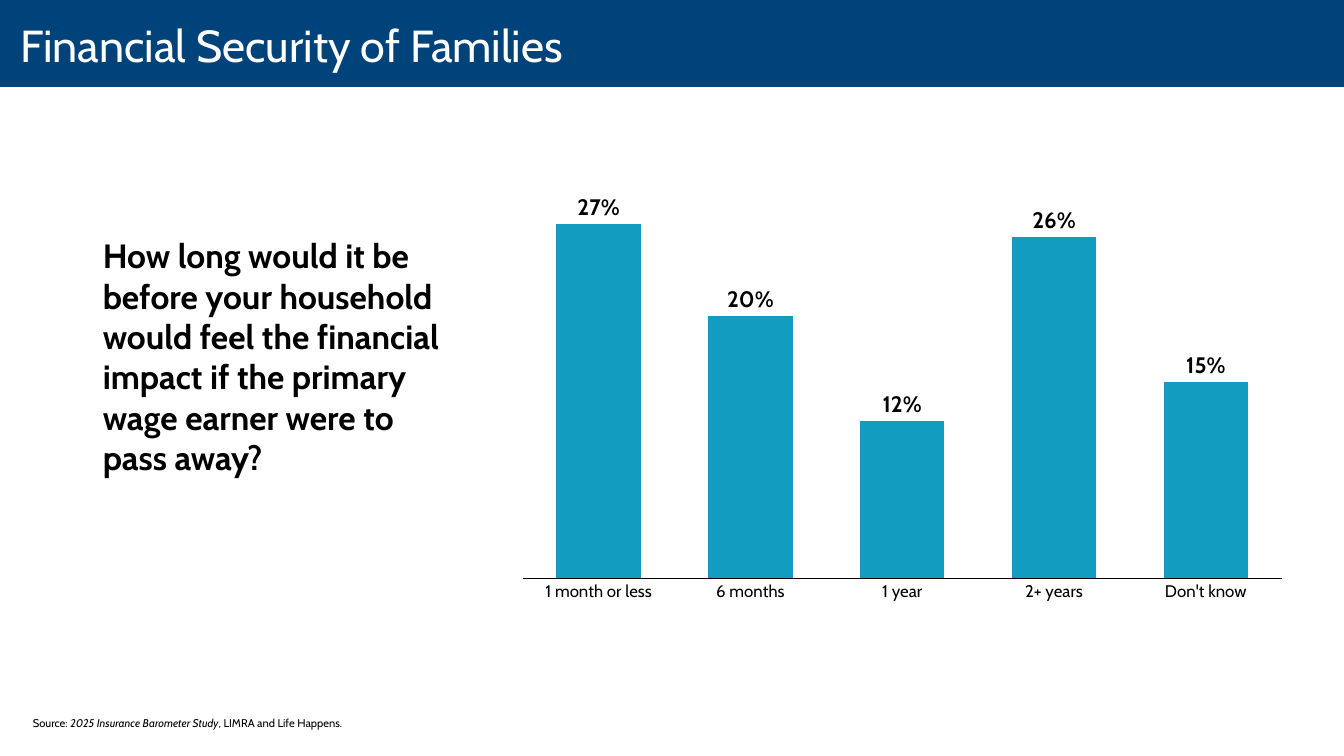
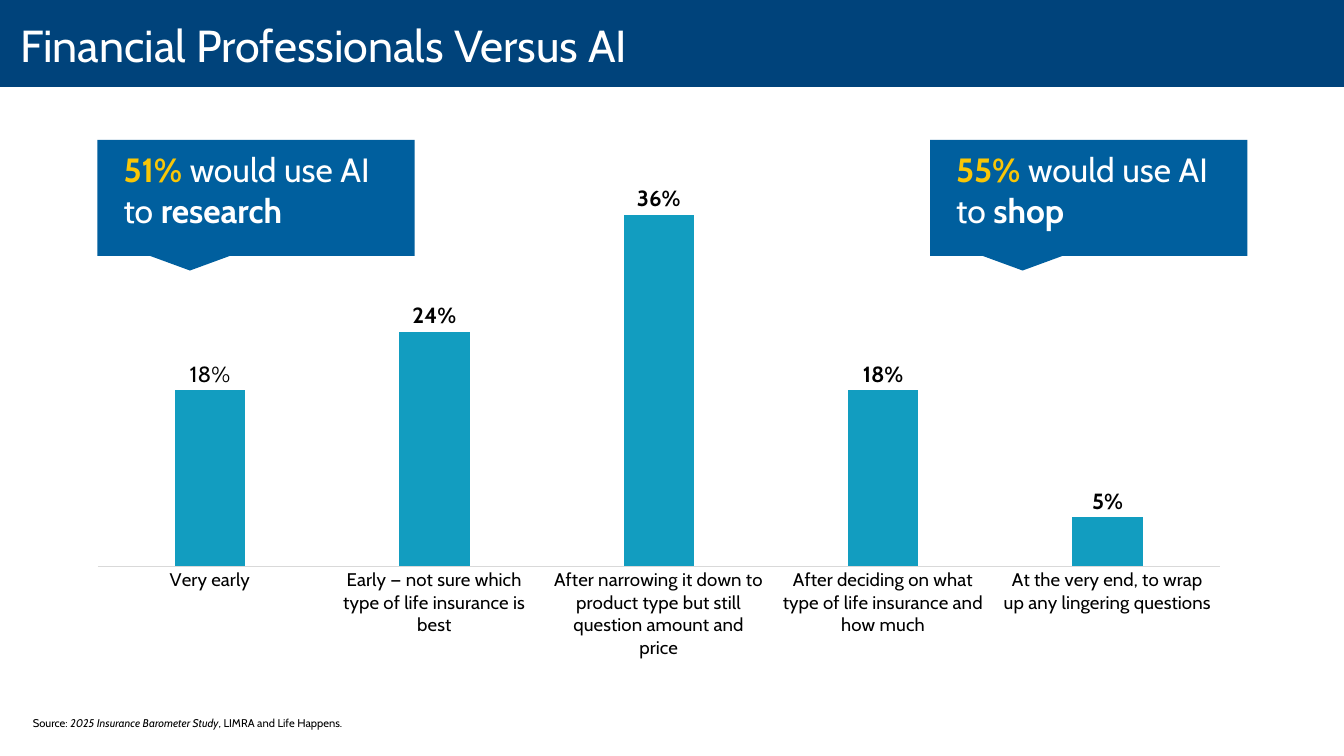
"""Build two slides on household financial security and the use of AI."""
from lxml import etree
from pptx import Presentation
from pptx.chart.data import CategoryChartData
from pptx.dml.color import RGBColor
from pptx.enum import chart as chart_enum, shapes, text
from pptx.oxml import ns
from pptx.util import Pt

FONT = "Cabin"
COLORS = {
    "band": "00437B", "callout": "005F9E", "bar": "129DC0", "accent": "F9C606",
    "white": "FFFFFF", "black": "000000", "gray": "D9D9D9",
}
WIDTH, HEIGHT = 1440, 810
BAND_BOX = (0, 0, WIDTH, 93)
TITLE_BOX = (0, -5, WIDTH, 105)
SOURCE_BOX = (28, 764, 984, 21.6)
SOURCE = [
    ("Source: ", {}),
    ("2025 Insurance Barometer Study", {"italic": True}),
    (", LIMRA and Life Happens.", {}),
]

QUESTION = ("How long would it be before your household would feel the financial "
            "impact if the primary wage earner were to pass away?")
QUESTION_BOX = (103, 248.4, 397.5, 312.5)
IMPACT_CHART = {
    "box": (550, 111, 835, 587.5),
    "plot": {"x": 0.012, "y": 0.148, "w": 0.974, "h": 0.718},
    "bars": [("1 month or less", 0.27), ("6 months", 0.2), ("1 year", 0.12),
             ("2+ years", 0.26), ("Don't know", 0.15)],
    "maximum": 0.3, "gap": 80, "overlap": -42, "category_size": 18, "axis": "black",
}
STAGE_CHART = {
    "box": (104.4, 172.8, 1232, 533.5),
    "plot": {"x": 0, "y": 0.03, "w": 0.976, "h": 0.799},
    "bars": [
        ("Very early", 0.18),
        ("Early — not sure which type of life insurance is best", 0.24),
        ("After narrowing it down to product type but still question amount and price", 0.36),
        ("After deciding on what type of life insurance and how much", 0.18),
        ("At the very end, to wrap up any lingering questions", 0.05),
    ],
    "maximum": 0.4, "gap": 219, "overlap": -27, "category_size": 20, "axis": "gray",
}
CALLOUTS = [(104.4, "51%", "research"), (996.5, "55%", "shop")]
CALLOUT_TOP, CALLOUT_WIDTH, CALLOUT_HEIGHT = 149.8, 340, 124.5


def color(name):
    """Return a palette colour."""
    return RGBColor.from_string(COLORS[name])


def points(box):
    """Convert the numbers of a box to lengths."""
    return [Pt(value) for value in box]


def format_font(font, size, fill="black", bold=False, italic=False):
    """Apply the shared typeface and the given format to a font."""
    font.name, font.size, font.bold, font.italic = FONT, Pt(size), bold, italic
    font.color.rgb = color(fill)


def write(shape, runs, size, fill="black", anchor=text.MSO_ANCHOR.TOP,
          margins=(7.2, 3.6, 7.2, 3.6), **style):
    """Write one paragraph of (text, format) runs into a shape."""
    frame = shape.text_frame
    frame.word_wrap = True
    frame.auto_size = text.MSO_AUTO_SIZE.NONE
    frame.vertical_anchor = anchor
    (frame.margin_left, frame.margin_top,
     frame.margin_right, frame.margin_bottom) = points(margins)
    paragraph = frame.paragraphs[0]
    paragraph.alignment = text.PP_ALIGN.LEFT
    for words, run_style in runs:
        run = paragraph.add_run()
        run.text = words
        format_font(run.font, **{"size": size, "fill": fill, **style, **run_style})


def add_panel(parent, kind, box, fill=None):
    """Add a flat shape without outline."""
    panel = parent.add_shape(kind, *points(box))
    panel.shadow.inherit = False
    panel.line.fill.background()
    if fill:
        panel.fill.solid()
        panel.fill.fore_color.rgb = color(fill)
    else:
        panel.fill.background()
    return panel


def add_text(slide, box, runs, **style):
    """Add a text box."""
    write(slide.shapes.add_textbox(*points(box)), runs, **style)


def set_plot_layout(chart, plot):
    """Fix the inner plot area at fractions of the chart."""
    area = chart.element.find(".//" + ns.qn("c:plotArea"))
    for old in area.findall(ns.qn("c:layout")):
        area.remove(old)
    layout = etree.Element(ns.qn("c:layout"))
    manual = etree.SubElement(layout, ns.qn("c:manualLayout"))
    settings = {"layoutTarget": "inner", "xMode": "edge", "yMode": "edge", **plot}
    for tag, value in settings.items():
        etree.SubElement(manual, ns.qn("c:" + tag)).set("val", str(value))
    area.insert(0, layout)


def add_column_chart(slide, details):
    """Add a column chart of percentages and return its plot."""
    data = CategoryChartData(number_format="0%")
    data.categories = [name for name, _ in details["bars"]]
    data.add_series("Series 1", [value for _, value in details["bars"]])
    chart = slide.shapes.add_chart(chart_enum.XL_CHART_TYPE.COLUMN_CLUSTERED,
                                   *points(details["box"]), data).chart
    chart.has_legend = chart.has_title = False
    format_font(chart.font, 10)

    values = chart.value_axis
    values.minimum_scale, values.maximum_scale = 0, details["maximum"]
    values.has_major_gridlines = values.visible = False
    categories = chart.category_axis
    categories.major_tick_mark = chart_enum.XL_TICK_MARK.NONE
    categories.format.line.color.rgb = color(details["axis"])
    categories.format.line.width = Pt(0.75)
    format_font(categories.tick_labels.font, details["category_size"])

    plot = chart.plots[0]
    plot.vary_by_categories = False
    plot.gap_width, plot.overlap = details["gap"], details["overlap"]
    series = plot.series[0]
    series.format.fill.solid()
    series.format.fill.fore_color.rgb = color("bar")
    labels = series.data_labels
    labels.show_value = True
    labels.number_format, labels.number_format_is_linked = "0%", False
    labels.position = chart_enum.XL_LABEL_POSITION.OUTSIDE_END
    format_font(labels.font, 24, bold=True)
    set_plot_layout(chart, details["plot"])
    return plot


def add_callout(slide, left, share, purpose):
    """Add a callout panel with its text as a group."""
    group = slide.shapes.add_group_shape()
    kind = shapes.MSO_SHAPE.RECTANGULAR_CALLOUT
    add_panel(group.shapes, kind, (left, CALLOUT_TOP, CALLOUT_WIDTH, CALLOUT_HEIGHT), "callout")
    label = add_panel(group.shapes, kind, (left + 20.9, CALLOUT_TOP + 6.5, 304.5, 94.3))
    write(label, [(share, {"fill": "accent", "bold": True}), (" would use AI to ", {}),
                  (purpose, {"bold": True})], size=36, fill="white")


def add_slide(presentation, layout, title):
    """Add a slide with the shared title and source line."""
    slide = presentation.slides.add_slide(layout)
    heading = slide.shapes.title
    heading.left, heading.top, heading.width, heading.height = points(TITLE_BOX)
    write(heading, [(title, {})], size=48, fill="white",
          anchor=text.MSO_ANCHOR.MIDDLE, margins=(21.6, 0, 14.4, 0))
    add_text(slide, SOURCE_BOX, SOURCE, size=12)
    return slide


def main():
    """Build and save the presentation."""
    presentation = Presentation()
    presentation.slide_width, presentation.slide_height = Pt(WIDTH), Pt(HEIGHT)
    layout = presentation.slide_layouts[5]

    security = add_slide(presentation, layout, "Financial Security of Families")
    band = add_panel(security.shapes, shapes.MSO_SHAPE.RECTANGLE, BAND_BOX, "band")
    layout.shapes.element.insert(2, band.element)
    add_text(security, QUESTION_BOX, [(QUESTION, {})], size=36, bold=True)
    add_column_chart(security, IMPACT_CHART)

    versus = add_slide(presentation, layout, "Financial Professionals Versus AI")
    plot = add_column_chart(versus, STAGE_CHART)
    first_label = plot.series[0].points[0].data_label
    format_font(first_label.font, 24)
    first_label.position = chart_enum.XL_LABEL_POSITION.OUTSIDE_END
    for left, share, purpose in CALLOUTS:
        add_callout(versus, left, share, purpose)

    presentation.save("out.pptx")


if __name__ == "__main__":
    main()
